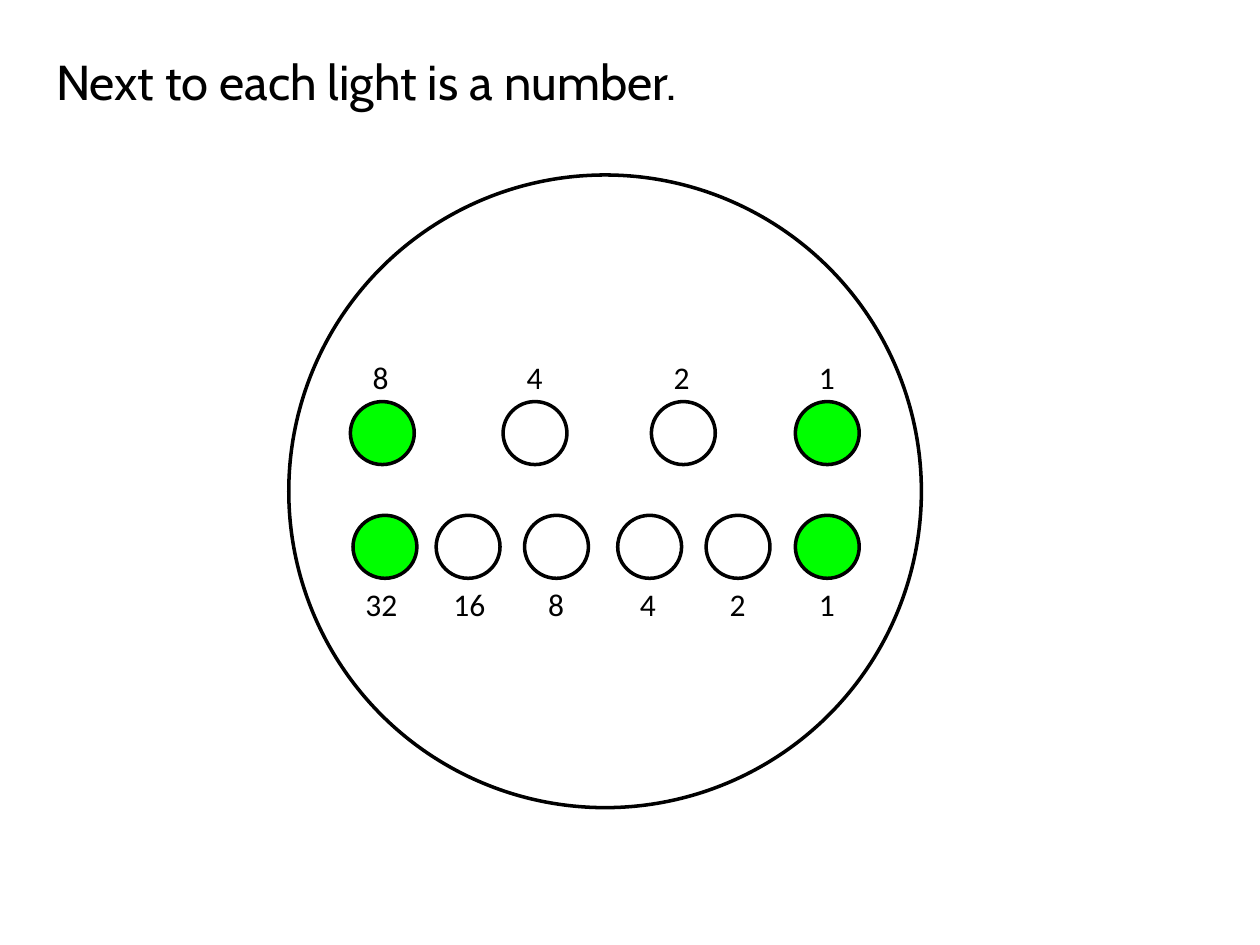
from pptx import Presentation
from pptx.dml.color import RGBColor
from pptx.enum.shapes import MSO_SHAPE
from pptx.enum.text import MSO_AUTO_SIZE
from pptx.util import Pt

COLORS = {"ink": "000000", "on": "00FF00", "off": "FFFFFF"}
TITLE = {"name": "Cabin", "size": Pt(28)}
LABEL = {"name": "Calibri", "size": Pt(18)}
LIGHT = (36.5, 36)  # width, height of a light

# Rows of the dial: top of lights, top of labels, and for each light
# its number, centre, label shift and whether it is lit
ROWS = [
    (129.5, 101, [("8", 53.5, -0.75, True), ("4", 140.75, 0, False),
                  ("2", 225.5, -0.75, False), ("1", 307.75, 0, True)]),
    (194.5, 230.5, [("32", 55, -1.75, True), ("16", 102.5, 1, False),
                    ("8", 153, 0, False), ("4", 206.25, -0.75, False),
                    ("2", 256.75, 0, False), ("1", 307.75, 0, True)]),
]


def color(key):
    return RGBColor.from_string(COLORS[key])


def write(slide, text, box, style, wrap=False):
    frame = slide.shapes.add_textbox(*map(Pt, box)).text_frame
    frame.word_wrap = wrap
    frame.auto_size = MSO_AUTO_SIZE.SHAPE_TO_FIT_TEXT
    run = frame.paragraphs[0].add_run()
    run.text = text
    for key, value in style.items():
        setattr(run.font, key, value)
    run.font.color.rgb = color("ink")


def ring(group, box, fill=None):
    shape = group.shapes.add_shape(MSO_SHAPE.OVAL, *map(Pt, box))
    shape.shadow.inherit = False
    if fill:
        shape.fill.solid()
        shape.fill.fore_color.rgb = color(fill)
    else:
        shape.fill.background()
    shape.line.color.rgb = color("ink")
    shape.line.width = Pt(2)


def dial(slide, left, top, size):
    # Outer circle, with the lights grouped inside it
    group = slide.shapes.add_group_shape()
    ring(group, (left, top, size, size))
    wide, high = LIGHT
    for row, label, lights in ROWS:
        for text, mid, shift, lit in lights:
            x = left + mid
            ring(group, (x - wide / 2, top + row, wide, high),
                 "on" if lit else "off")
            # Number next to the light
            span = 14.5 + 9.25 * len(text)
            write(slide, text,
                  (x + shift - span / 2, top + label, span, 29), LABEL)


def main():
    deck = Presentation()
    deck.slide_width, deck.slide_height = Pt(720), Pt(540)
    slide = deck.slides.add_slide(deck.slide_layouts[6])
    write(slide, "Next to each light is a number.",
          (25, 26, 695, 41), TITLE, wrap=True)
    dial(slide, 165, 100, 361.5)
    deck.save("out.pptx")


if __name__ == "__main__":
    main()
